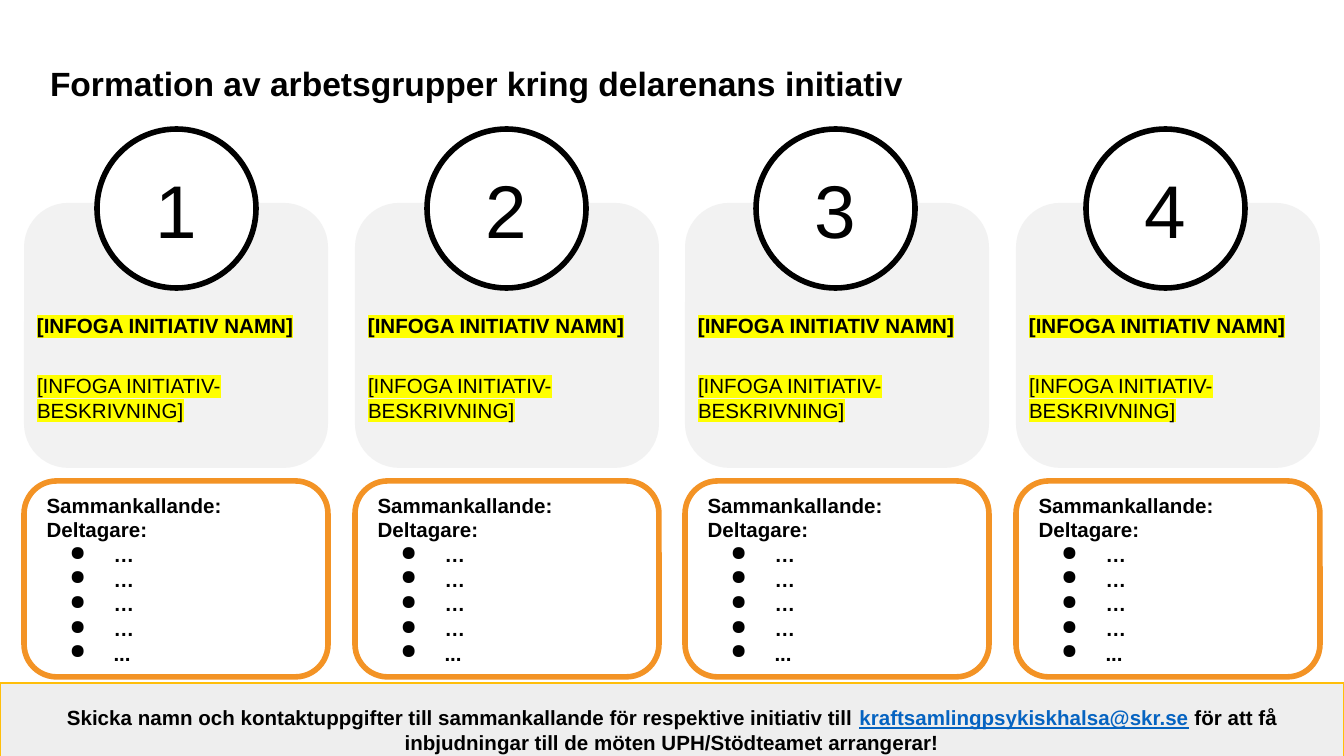
"""Build a slide with four working groups, one for each initiative."""
from dataclasses import dataclass
from typing import Any

import lxml.etree
import pptx
import pptx.dml.color
import pptx.enum.shapes
import pptx.enum.text
import pptx.oxml
import pptx.oxml.ns
import pptx.util

PX = 914400 / 134.4
SLIDE_WIDTH, SLIDE_HEIGHT = 1344, 756
GROUP_COUNT = 4
SHAPES = pptx.enum.shapes.MSO_SHAPE
ALIGN = pptx.enum.text.PP_ALIGN
ANCHOR = pptx.enum.text.MSO_ANCHOR
BLACK, WHITE, YELLOW, ORANGE = "000000", "FFFFFF", "FFFF00", "F39325"
TITLE_FONT = {"name": "Arial", "size": pptx.util.Pt(18), "bold": True}
NUMBER_FONT = {"name": "Arial", "size": pptx.util.Pt(40), "bold": False}
STRONG_FONT = {"name": "Arial", "size": pptx.util.Pt(11), "bold": True}
PLAIN_FONT = STRONG_FONT | {"bold": False}
EMAIL_FONT = STRONG_FONT | {"underline": True}


@dataclass(frozen=True)
class Box:
    left: int
    top: int
    width: int
    height: int

    def emu(self) -> list[int]:
        return [px(side) for side in (self.left, self.top, self.width, self.height)]


@dataclass(frozen=True)
class Words:
    text: str
    font: dict[str, Any]
    color: str = BLACK
    highlight: str = ""


@dataclass(frozen=True)
class Line:
    words: tuple[Words, ...]
    align: Any = ALIGN.LEFT
    bullet: bool = False


def px(length: float) -> int:
    return round(length * PX)


def rgb(value: str) -> pptx.dml.color.RGBColor:
    return pptx.dml.color.RGBColor.from_string(value)


def apply(target: Any, formats: dict[str, Any]) -> None:
    for attribute, value in formats.items():
        setattr(target, attribute, value)


def add_bullet(paragraph: Any) -> None:
    properties = paragraph._p.get_or_add_pPr()
    properties.set("marL", str(px(67)))
    properties.set("indent", str(px(-44)))
    bullet_color = lxml.etree.SubElement(properties, pptx.oxml.ns.qn("a:buClr"))
    lxml.etree.SubElement(bullet_color, pptx.oxml.ns.qn("a:srgbClr"), val=BLACK)
    lxml.etree.SubElement(properties, pptx.oxml.ns.qn("a:buChar"), char="●")


def add_highlight(run: Any, color: str) -> None:
    highlight = pptx.oxml.parse_xml(
        f'<a:highlight {pptx.oxml.ns.nsdecls("a")}><a:srgbClr val="{color}"/></a:highlight>'
    )
    run._r.get_or_add_rPr().find(pptx.oxml.ns.qn("a:solidFill")).addnext(highlight)


def write(frame: Any, lines: list[Line], anchor: Any, side: int = 13, edge: int = 7) -> None:
    apply(frame, {
        "word_wrap": True,
        "auto_size": pptx.enum.text.MSO_AUTO_SIZE.NONE,
        "vertical_anchor": anchor,
        "margin_left": px(side),
        "margin_right": px(side),
        "margin_top": px(edge),
        "margin_bottom": px(edge),
    })
    for index, line in enumerate(lines):
        paragraph = frame.add_paragraph() if index else frame.paragraphs[0]
        paragraph.alignment = line.align
        if line.bullet:
            add_bullet(paragraph)
        for words in line.words:
            run = paragraph.add_run()
            run.text = words.text
            apply(run.font, words.font)
            run.font.color.rgb = rgb(words.color)
            if words.highlight:
                add_highlight(run, words.highlight)


def add_panel(slide: Any, kind: Any, box: Box, fill: str, outline: str = "", weight: float = 3) -> Any:
    panel = slide.shapes.add_shape(kind, *box.emu())
    panel.shadow.inherit = False
    panel.fill.solid()
    panel.fill.fore_color.rgb = rgb(fill)
    if outline:
        panel.line.color.rgb = rgb(outline)
        panel.line.width = pptx.util.Pt(weight)
    else:
        panel.line.fill.background()
    return panel


def add_label(slide: Any, box: Box, words: Words) -> None:
    label = slide.shapes.add_textbox(*box.emu())
    write(label.text_frame, [Line((words,))], ANCHOR.TOP)


def add_group(slide: Any, index: int) -> None:
    left = round(24 + index * 992 / 3)
    circle_left = round(97 + index * 989 / 3)
    add_panel(slide, SHAPES.ROUNDED_RECTANGLE, Box(left, 203, 304, 265), "F2F2F2")
    add_label(slide, Box(left, 306, 285, 39),
              Words("[INFOGA INITIATIV NAMN]", STRONG_FONT, highlight=YELLOW))
    add_label(slide, Box(left, 366, 304, 63),
              Words("[INFOGA INITIATIV-BESKRIVNING]", PLAIN_FONT, highlight=YELLOW))

    number = add_panel(slide, SHAPES.OVAL, Box(circle_left, 129, 159, 159), WHITE, BLACK)
    write(number.text_frame,
          [Line((Words(str(index + 1), NUMBER_FONT),), ALIGN.CENTER)], ANCHOR.MIDDLE)

    members = add_panel(slide, SHAPES.ROUNDED_RECTANGLE, Box(left, 481, 304, 196), WHITE, ORANGE)
    roles = [Line((Words(role, STRONG_FONT),)) for role in ("Sammankallande:", "Deltagare:")]
    people = [Line((Words(dots, STRONG_FONT),), bullet=True) for dots in ["…"] * 4 + ["..."]]
    write(members.text_frame, roles + people, ANCHOR.MIDDLE)


def add_title(slide: Any) -> None:
    title = slide.shapes.title
    apply(title, dict(zip(("left", "top", "width", "height"), Box(40, 30, 1250, 79).emu())))
    heading = Words("Formation av arbetsgrupper kring delarenans initiativ", TITLE_FONT)
    write(title.text_frame, [Line((heading,))], ANCHOR.BOTTOM, side=10, edge=5)
    title.text_frame.paragraphs[0].line_spacing = 0.95


def add_footer(slide: Any) -> None:
    footer = add_panel(slide, SHAPES.RECTANGLE, Box(0, 683, SLIDE_WIDTH, 94), "EEEEEE", "FFBE0A", 0.75)
    invitation = (
        Words("Skicka namn och kontaktuppgifter till sammankallande för respektive initiativ till ",
              STRONG_FONT),
        Words("kraftsamlingpsykiskhalsa@skr.se", EMAIL_FONT, "0563C1"),
        Words(" för att få inbjudningar till de möten UPH/Stödteamet arrangerar!", STRONG_FONT),
    )
    write(footer.text_frame, [Line(invitation, ALIGN.CENTER)], ANCHOR.MIDDLE, edge=13)


def main() -> None:
    presentation = pptx.Presentation()
    apply(presentation, {"slide_width": px(SLIDE_WIDTH), "slide_height": px(SLIDE_HEIGHT)})
    slide = presentation.slides.add_slide(presentation.slide_layouts[5])
    add_title(slide)
    for index in range(GROUP_COUNT):
        add_group(slide, index)
    add_footer(slide)
    presentation.save("out.pptx")


if __name__ == "__main__":
    main()
